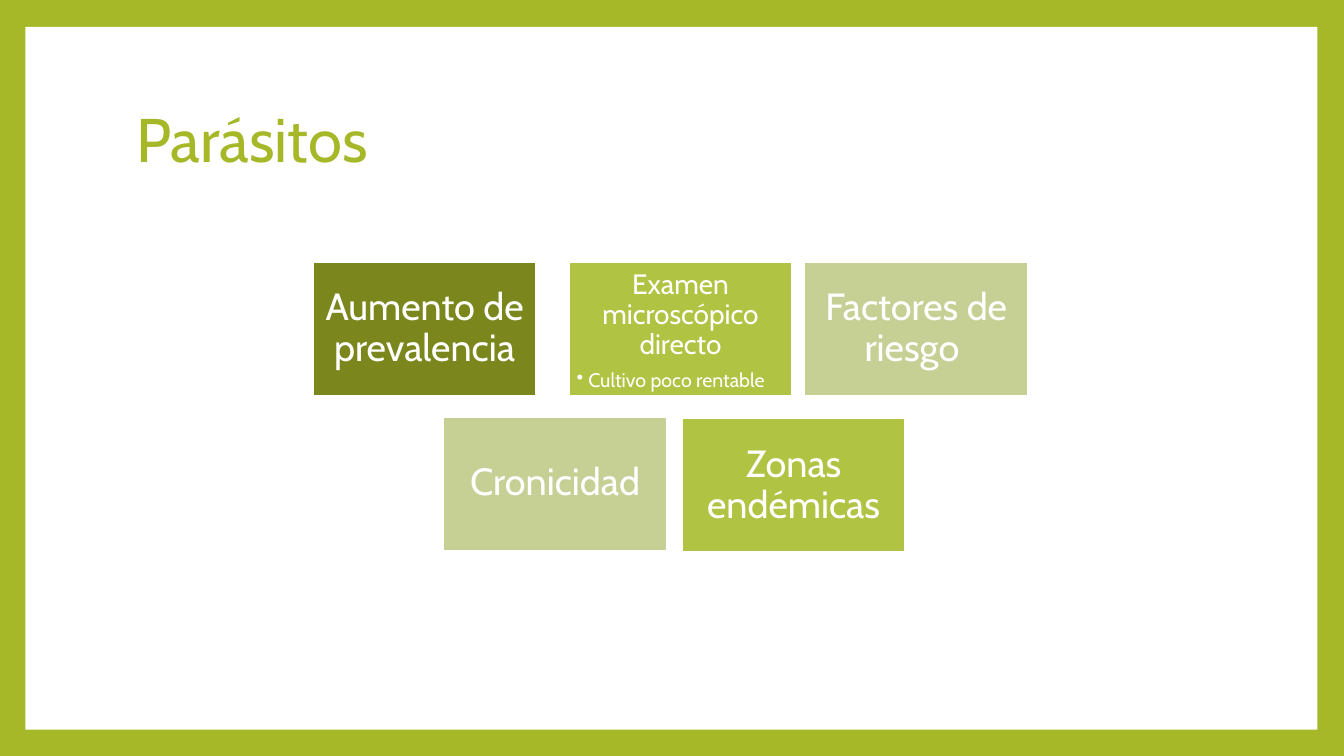
from lxml import etree
from pptx import Presentation
from pptx.dml.color import RGBColor
from pptx.enum import shapes, text
from pptx.oxml import ns
from pptx.util import Cm, Pt

GREEN, OLIVE, LIME, PALE, WHITE = "A6B727", "7B871D", "B0C342", "C6D095", "FFFFFF"


def colour(value):
    return RGBColor.from_string(value)


class SlideBuilder:
    font_name = "Cabin"
    box_width, box_height = 5.64, 3.38

    def __init__(self, presentation):
        self.slide = presentation.slides.add_slide(presentation.slide_layouts[5])

    def background(self, fill):
        self.slide.background.fill.solid()
        self.slide.background.fill.fore_color.rgb = colour(fill)

    def format(self, paragraph, size, ink, align):
        paragraph.alignment = align
        paragraph.line_spacing = 0.9
        for run in paragraph.runs:
            run.font.name = self.font_name
            run.font.size = Pt(size)
            run.font.color.rgb = colour(ink)

    def rectangle(self, left, top, width, height, fill):
        shape = self.slide.shapes.add_shape(
            shapes.MSO_SHAPE.RECTANGLE, Cm(left), Cm(top), Cm(width), Cm(height))
        shape.shadow.inherit = False
        shape.fill.solid()
        shape.fill.fore_color.rgb = colour(fill)
        shape.line.fill.background()
        return shape

    def panel(self, left, top, width, height):
        shape = self.rectangle(left, top, width, height, WHITE)
        # Behind the title placeholder
        self.slide.shapes._spTree.insert(2, shape._element)

    def title(self, words, left, top, width, height):
        title = self.slide.shapes.title
        title.left, title.top, title.width, title.height = map(Cm, (left, top, width, height))
        frame = title.text_frame
        frame.text = words
        frame.auto_size = text.MSO_AUTO_SIZE.NONE
        frame.vertical_anchor = text.MSO_ANCHOR.MIDDLE
        self.format(frame.paragraphs[0], 44, GREEN, text.PP_ALIGN.LEFT)

    def box(self, words, left, top, fill, detail=None):
        shape = self.rectangle(left, top, self.box_width, self.box_height, fill)
        shape.line.color.rgb = colour(WHITE)
        shape.line.width = Pt(1.5)
        frame = shape.text_frame
        frame.word_wrap = True
        frame.vertical_anchor = text.MSO_ANCHOR.TOP if detail else text.MSO_ANCHOR.MIDDLE
        inset = Cm(0.2 if detail else 0.27)
        frame.margin_left = frame.margin_right = inset
        frame.margin_top = frame.margin_bottom = inset
        frame.text = words
        heading = frame.paragraphs[0]
        self.format(heading, 20 if detail else 27, WHITE, text.PP_ALIGN.CENTER)
        if detail:
            heading.space_after = Pt(7)
            self.bullet(frame.add_paragraph(), detail)

    def bullet(self, paragraph, words):
        paragraph.text = words
        paragraph.level = 1
        self.format(paragraph, 14, WHITE, text.PP_ALIGN.LEFT)
        properties = paragraph._p.get_or_add_pPr()
        properties.set("marL", str(Cm(0.3)))
        properties.set("indent", str(-Cm(0.3)))
        etree.SubElement(properties, ns.qn("a:buChar")).set("char", "•")


def main():
    presentation = Presentation()
    presentation.slide_width, presentation.slide_height = Cm(33.87), Cm(19.05)
    builder = SlideBuilder(presentation)

    # Frame and title
    builder.background(GREEN)
    builder.panel(0.64, 0.68, 32.56, 17.71)
    builder.title("Parásitos", 3.18, 1.7, 27.43, 3.76)

    # Upper row
    builder.box("Aumento de prevalencia", 7.88, 6.6, OLIVE)
    builder.box("Examen microscópico directo", 14.33, 6.6, LIME, "Cultivo poco rentable")
    builder.box("Factores de riesgo ", 20.27, 6.6, PALE)

    # Lower row
    builder.box("Cronicidad", 11.17, 10.5, PALE)
    builder.box("Zonas endémicas", 17.18, 10.54, LIME)

    presentation.save("out.pptx")


if __name__ == "__main__":
    main()
